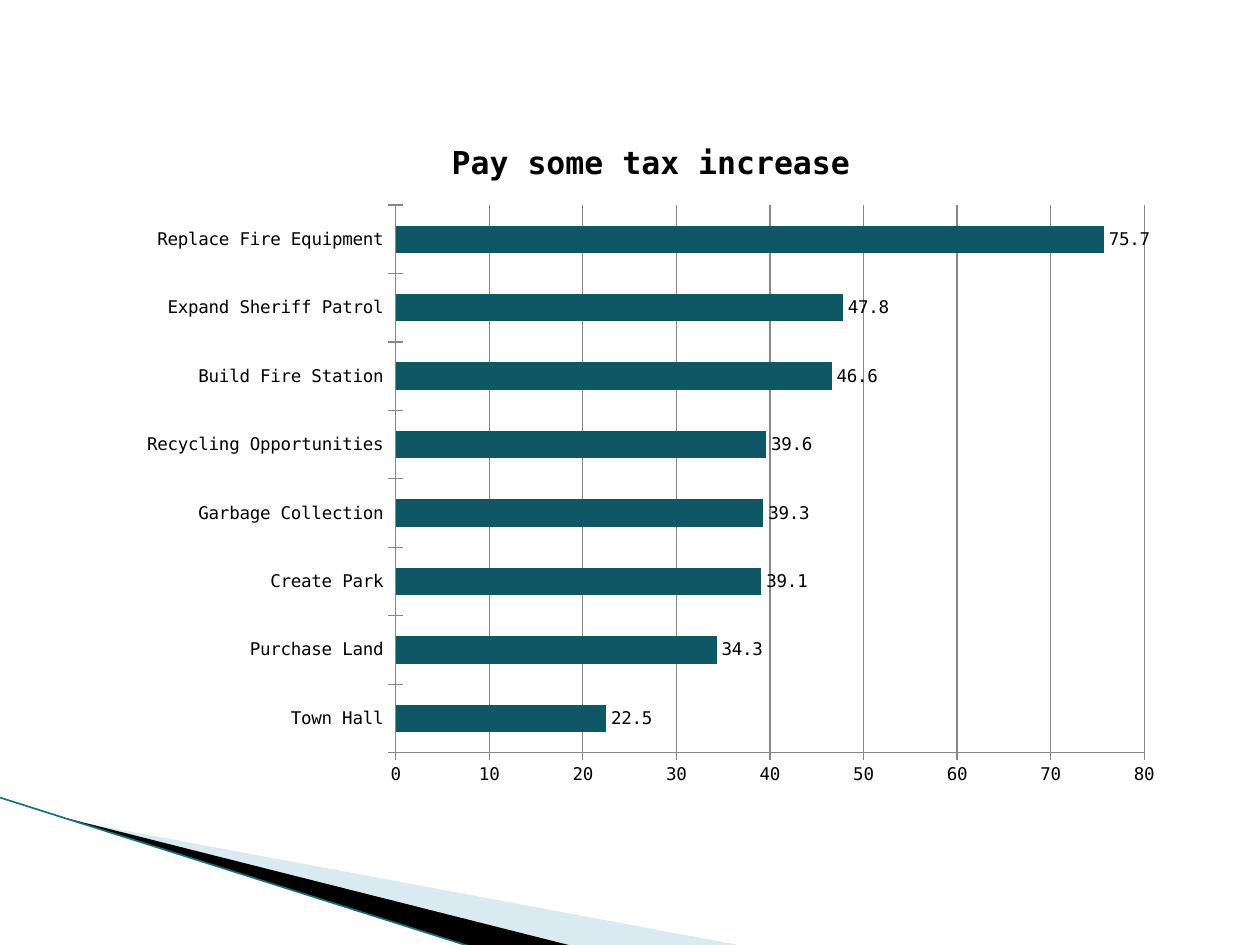
import pptx
import pptx.chart.data
import pptx.dml.color
import pptx.enum.chart
import pptx.enum.shapes
import pptx.oxml
import pptx.oxml.ns
import pptx.util

RGBColor = pptx.dml.color.RGBColor
PALE_BLUE = RGBColor(0xA0, 0xCB, 0xDC)
EDGE_TEAL = RGBColor(0x1B, 0x6F, 0x82)
BAR_TEAL = RGBColor(0x10, 0x57, 0x66)
GRID_GRAY = RGBColor(0x87, 0x87, 0x87)
BLACK = RGBColor(0, 0, 0)
FONT = "DejaVu Sans Mono"

WIDTH, HEIGHT = pptx.util.Inches(10), pptx.util.Inches(7.5)
CHART_TITLE = "Pay some tax increase"
SUPPORT = {
    "Town Hall": 22.5,
    "Purchase Land": 34.3,
    "Create Park": 39.1,
    "Garbage Collection": 39.3,
    "Recycling Opportunities": 39.6,
    "Build Fire Station": 46.6,
    "Expand Sheriff Patrol": 47.8,
    "Replace Fire Equipment": 75.7,
}


def add_wedge(slide, box, corners, color, opacity=100):
    """Fill the outline whose corners are shares of the box."""
    left, top, width, height = box
    points = [(round(left + x * width), round(top + y * height)) for x, y in corners]
    builder = slide.shapes.build_freeform(*points[0])
    builder.add_line_segments(points[1:], close=True)
    wedge = builder.convert_to_shape()
    wedge.shadow.inherit = False
    wedge.fill.solid()
    wedge.fill.fore_color.rgb = color
    wedge.line.fill.background()
    if opacity < 100:
        srgb = wedge._element.spPr.find(".//" + pptx.oxml.ns.qn("a:srgbClr"))
        alpha = srgb.makeelement(pptx.oxml.ns.qn("a:alpha"), {"val": str(opacity * 1000)})
        srgb.append(alpha)


def add_corner_sweep(slide, box):
    left, top, width, height = box
    add_wedge(slide, box, [(0.09, 0.15), (1, 1), (0.77, 1)], PALE_BLUE, 40)
    add_wedge(slide, box, [(0.09, 0.14), (0.77, 1), (0.63, 1)], BLACK)
    edge = slide.shapes.add_connector(
        pptx.enum.shapes.MSO_CONNECTOR.STRAIGHT,
        left, top, left + round(0.63 * width), top + height)
    edge.line.color.rgb = EDGE_TEAL
    edge.line.width = pptx.util.Pt(0.95)
    properties = edge._element.spPr
    properties.append(properties.makeelement(pptx.oxml.ns.qn("a:effectLst"), {}))


def style_axis(axis):
    axis.major_tick_mark = pptx.enum.chart.XL_TICK_MARK.CROSS
    axis.minor_tick_mark = pptx.enum.chart.XL_TICK_MARK.NONE
    axis.format.line.color.rgb = GRID_GRAY
    axis.format.line.width = pptx.util.Pt(0.75)


def add_support_chart(slide, box):
    data = pptx.chart.data.CategoryChartData(number_format="0.0")
    data.categories = list(SUPPORT)
    data.add_series(CHART_TITLE, list(SUPPORT.values()))
    chart = slide.shapes.add_chart(
        pptx.enum.chart.XL_CHART_TYPE.BAR_CLUSTERED, *box, data).chart
    chart.has_legend = False
    chart.font.name = FONT
    chart.font.size = pptx.util.Pt(10)
    chart.font.color.rgb = BLACK

    chart.has_title = True
    heading = chart.chart_title.text_frame.paragraphs[0].add_run()
    heading.text = CHART_TITLE
    heading.font.name = FONT
    heading.font.size = pptx.util.Pt(18)
    heading.font.bold = True
    heading.font.color.rgb = BLACK
    chart.chart_title.include_in_layout = False

    style_axis(chart.category_axis)
    scale = chart.value_axis
    style_axis(scale)
    scale.minimum_scale, scale.maximum_scale, scale.major_unit = 0, 80, 10
    scale.tick_labels.number_format = "0"
    scale.tick_labels.number_format_is_linked = False
    scale.has_major_gridlines = True
    scale.major_gridlines.format.line.color.rgb = GRID_GRAY
    scale.major_gridlines.format.line.width = pptx.util.Pt(0.75)

    plot = chart.plots[0]
    plot.gap_width = 150
    plot.vary_by_categories = False
    bars = plot.series[0]
    bars.format.fill.solid()
    bars.format.fill.fore_color.rgb = BAR_TEAL
    labels = bars.data_labels
    labels.show_value = True
    labels.position = pptx.enum.chart.XL_LABEL_POSITION.OUTSIDE_END


def share_box(left, top, width, height):
    """Turn shares of the slide's size into lengths."""
    return (round(left * WIDTH), round(top * HEIGHT),
            round(width * WIDTH), round(height * HEIGHT))


def main():
    deck = pptx.Presentation()
    deck.slide_width, deck.slide_height = WIDTH, HEIGHT
    slide = deck.slides.add_slide(deck.slide_layouts[6])
    add_corner_sweep(slide, share_box(0, 0.844, 0.59, 0.157))
    add_support_chart(slide, share_box(0.1, 0.122, 0.833, 0.723))
    deck.save("out.pptx")


if __name__ == "__main__":
    main()
